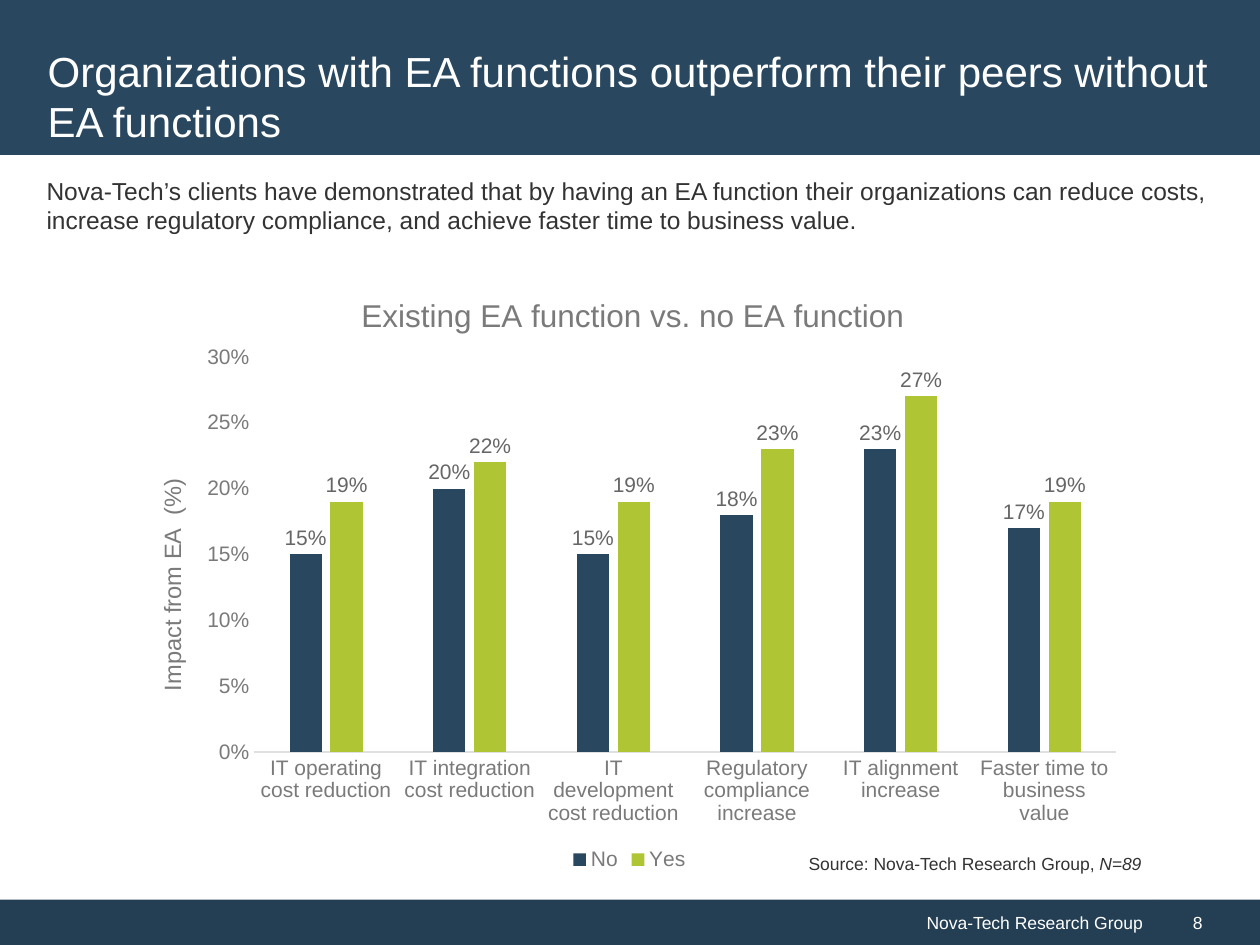
"""Build a slide comparing organizations with and without an EA function."""
from pptx import Presentation
from pptx.chart.data import CategoryChartData
from pptx.dml.color import RGBColor
from pptx.enum.chart import XL_CHART_TYPE, XL_LABEL_POSITION, XL_LEGEND_POSITION, XL_TICK_MARK
from pptx.enum.shapes import MSO_SHAPE
from pptx.enum.text import MSO_ANCHOR, MSO_AUTO_SIZE, PP_ALIGN
from pptx.oxml.ns import qn
from pptx.util import Pt
from lxml import etree

COLUMNS = XL_CHART_TYPE.COLUMN_CLUSTERED
OUTSIDE = XL_LABEL_POSITION.OUTSIDE_END
BOTTOM = XL_LEGEND_POSITION.BOTTOM
NO_TICK = XL_TICK_MARK.NONE
RECTANGLE = MSO_SHAPE.RECTANGLE
TOP, MIDDLE = MSO_ANCHOR.TOP, MSO_ANCHOR.MIDDLE
NO_FIT = MSO_AUTO_SIZE.NONE
LEFT, RIGHT = PP_ALIGN.LEFT, PP_ALIGN.RIGHT

NAVY = RGBColor(0x29, 0x47, 0x5F)
DARK_NAVY = RGBColor(0x24, 0x3F, 0x54)
LIME = RGBColor(0xB0, 0xC5, 0x34)
WHITE = RGBColor(0xFF, 0xFF, 0xFF)
INK = RGBColor(0x33, 0x33, 0x33)
LABEL_GREY = RGBColor(0x66, 0x66, 0x66)
AXIS_GREY = RGBColor(0x7A, 0x7A, 0x7A)
LINE_GREY = RGBColor(0xE0, 0xE0, 0xE0)
FONT = "Arial"

TITLE = "Organizations with EA functions outperform their peers without EA functions"
INTRO = (
    "Nova-Tech’s clients have demonstrated that by having an EA function their "
    "organizations can reduce costs, increase regulatory compliance, and achieve "
    "faster time to business value."
)
CHART_TITLE = "Existing EA function vs. no EA function"
AXIS_TITLE = "Impact from EA  (%)"
BENEFITS = [
    "IT operating cost reduction",
    "IT integration cost reduction",
    "IT development cost reduction",
    "Regulatory compliance increase",
    "IT alignment increase",
    "Faster time to business value",
]
IMPACTS = [
    ("No", NAVY, (0.15, 0.20, 0.15, 0.18, 0.23, 0.17)),
    ("Yes", LIME, (0.19, 0.22, 0.19, 0.23, 0.27, 0.19)),
]
SOURCE = [("Source: Nova-Tech Research Group, ", False), ("N=89", True)]
PUBLISHER = "Nova-Tech Research Group"
PAGE = "8"

WIDTH, HEIGHT = 720, 540
BANNER_HEIGHT = 88.5
FOOTER_TOP = 514
PAGE_LEFT = 660


def style(font, size, color):
    font.name = FONT
    font.size = Pt(size)
    font.color.rgb = color


def write(frame, runs, size, color, align=LEFT, anchor=TOP, wrap=True):
    frame.word_wrap = wrap
    frame.auto_size = NO_FIT
    frame.vertical_anchor = anchor
    paragraph = frame.paragraphs[0]
    paragraph.alignment = align
    for text, italic in runs:
        run = paragraph.add_run()
        run.text = text
        style(run.font, size, color)
        run.font.italic = italic


def add_band(shapes, left, top, width, height, color):
    band = shapes.add_shape(RECTANGLE, Pt(left), Pt(top), Pt(width), Pt(height))
    band.shadow.inherit = False
    band.fill.solid()
    band.fill.fore_color.rgb = color
    band.line.fill.background()
    return band


def place_in_chart(part, **fractions):
    layout = part.find(qn("c:layout"))
    if layout is None:
        layout = etree.Element(qn("c:layout"))
        part.insert(0, layout)
    manual = etree.SubElement(layout, qn("c:manualLayout"))
    if "w" in fractions:
        etree.SubElement(manual, qn("c:layoutTarget")).set("val", "inner")
    for side in "xy":
        etree.SubElement(manual, qn(f"c:{side}Mode")).set("val", "edge")
    for key, value in fractions.items():
        etree.SubElement(manual, qn(f"c:{key}")).set("val", str(value))


def name_part(heading, text, size, x, y):
    run = heading.text_frame.paragraphs[0].add_run()
    run.text = text
    style(run.font, size, AXIS_GREY)
    run.font.bold = False
    place_in_chart(heading.text_frame._txBody.getparent().getparent(), x=x, y=y)


def add_impact_chart(shapes):
    data = CategoryChartData(number_format="0%")
    data.categories = BENEFITS
    for name, _, values in IMPACTS:
        data.add_series(name, values)
    chart = shapes.add_chart(COLUMNS, Pt(70), Pt(147.5), Pt(579.5), Pt(353), data).chart
    style(chart.font, 10, INK)

    chart.has_title = True
    name_part(chart.chart_title, CHART_TITLE, 18, 0.23, 0.05)
    chart.has_legend = True
    chart.legend.position = BOTTOM
    chart.legend.include_in_layout = False
    style(chart.legend.font, 12, AXIS_GREY)

    benefit_axis, impact_axis = chart.category_axis, chart.value_axis
    for axis in (benefit_axis, impact_axis):
        axis.major_tick_mark = axis.minor_tick_mark = NO_TICK
        axis.has_major_gridlines = False
        style(axis.tick_labels.font, 12, AXIS_GREY)
    benefit_axis.format.line.color.rgb = LINE_GREY
    benefit_axis.format.line.width = Pt(0.75)
    impact_axis.format.line.fill.background()
    impact_axis.minimum_scale, impact_axis.maximum_scale = 0, 0.3
    impact_axis.major_unit = 0.05
    impact_axis.tick_labels.number_format = "0%"
    impact_axis.tick_labels.number_format_is_linked = False
    impact_axis.has_title = True
    name_part(impact_axis.axis_title, AXIS_TITLE, 13.5, 0.03, 0.35)
    turned = impact_axis.axis_title.text_frame._txBody.find(qn("a:bodyPr"))
    turned.set("rot", "-5400000")
    turned.set("vert", "horz")

    plot = chart.plots[0]
    plot.gap_width, plot.overlap = 219, -27
    plot.vary_by_categories = False
    for series, (_, color, _) in zip(plot.series, IMPACTS):
        series.format.fill.solid()
        series.format.fill.fore_color.rgb = color
        series.invert_if_negative = False
        labels = series.data_labels
        labels.show_value = True
        labels.position = OUTSIDE
        labels.number_format = "0%"
        labels.number_format_is_linked = False
        style(labels.font, 12, LABEL_GREY)
    place_in_chart(benefit_axis._element.getparent(), x=0.13, y=0.16, w=0.85, h=0.64)


def main():
    deck = Presentation()
    deck.slide_width, deck.slide_height = Pt(WIDTH), Pt(HEIGHT)
    slide = deck.slides.add_slide(deck.slide_layouts[5])
    shapes = slide.shapes

    title = shapes.title
    banner = add_band(shapes, 0, 0, WIDTH, BANNER_HEIGHT, NAVY)
    title.element.addprevious(banner.element)
    title.left, title.top, title.width, title.height = Pt(20), Pt(20), Pt(679), Pt(69)
    write(title.text_frame, [(TITLE, False)], 24, WHITE, anchor=MIDDLE)

    footer_height = HEIGHT - FOOTER_TOP
    publisher = add_band(shapes, 0, FOOTER_TOP, PAGE_LEFT, footer_height, DARK_NAVY)
    write(publisher.text_frame, [(PUBLISHER, False)], 10, WHITE, RIGHT, MIDDLE)
    page = add_band(shapes, PAGE_LEFT, FOOTER_TOP, WIDTH - PAGE_LEFT, footer_height, DARK_NAVY)
    page.text_frame.margin_left = Pt(21.6)
    write(page.text_frame, [(PAGE, False)], 10, WHITE, anchor=MIDDLE)

    intro = shapes.add_textbox(Pt(19.5), Pt(97), Pt(680), Pt(42))
    write(intro.text_frame, [(INTRO, False)], 14, INK)
    add_impact_chart(shapes)
    source = shapes.add_textbox(Pt(455), Pt(484), Pt(201), Pt(19.5))
    write(source.text_frame, SOURCE, 10, INK, wrap=False)

    deck.save("out.pptx")


if __name__ == "__main__":
    main()
